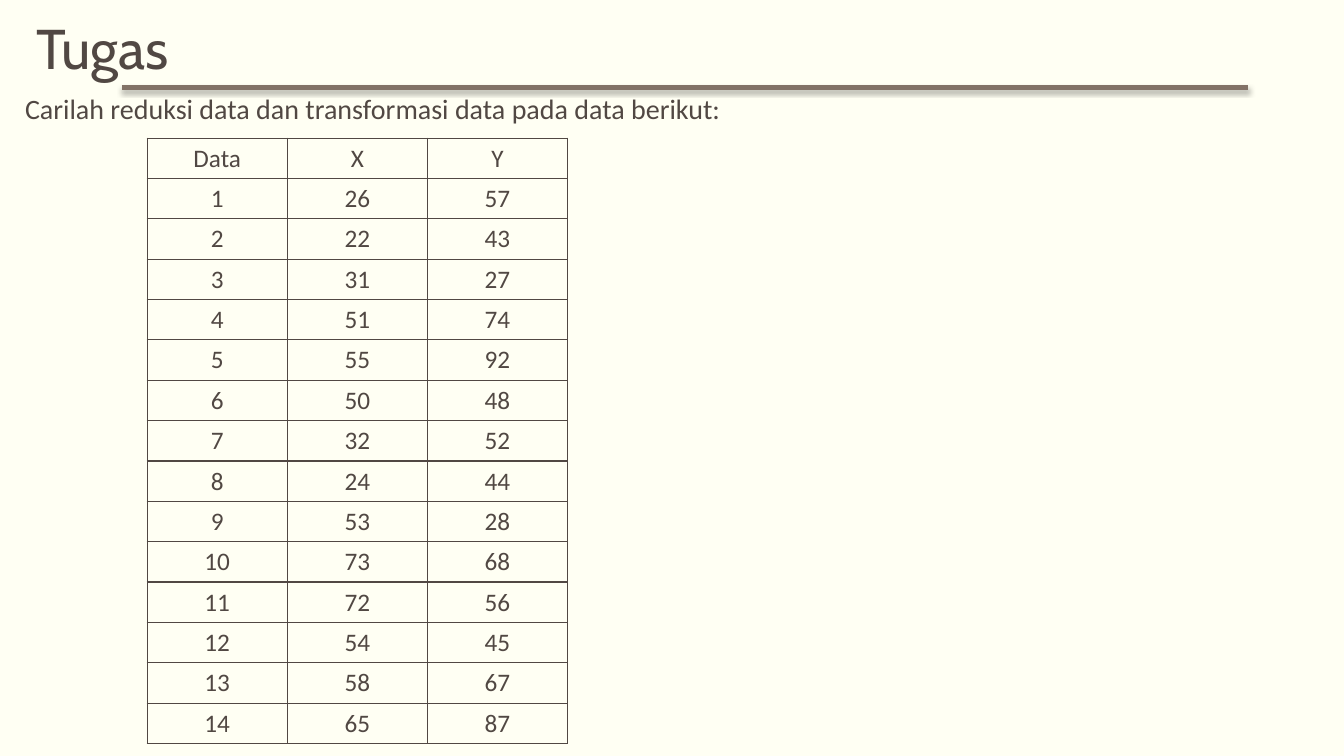
"""Build the assignment slide with its data table."""
import pptx
import pptx.dml.color
import pptx.enum.shapes
import pptx.enum.text
import pptx.oxml
import pptx.oxml.ns
import pptx.util
from pptx.util import Inches

TITLE = "Tugas"
TASK = "Carilah reduksi data dan transformasi data pada data berikut:"
HEADERS = ("Data", "X", "Y")
POINTS = [
    (26, 57), (22, 43), (31, 27), (51, 74), (55, 92), (50, 48), (32, 52),
    (24, 44), (53, 28), (73, 68), (72, 56), (54, 45), (58, 67), (65, 87),
]
BACKGROUND, INK, RULE = "FFFFF3", "514843", "827266"
TABLE_LEFT, TABLE_TOP, COLUMN_WIDTH, ROW_HEIGHT = 1.46, 1.37, 1.39, 0.4


def color(value):
    return pptx.dml.color.RGBColor.from_string(value)


def style(paragraph, size, font="Calibri"):
    paragraph.font.name = font
    paragraph.font.size = pptx.util.Pt(size)
    paragraph.font.color.rgb = color(INK)


def add_xml(parent, xml):
    namespace = pptx.oxml.ns.nsdecls("a")
    parent.append(pptx.oxml.parse_xml(xml.replace(" ", f" {namespace} ", 1)))


def add_rule(slide):
    rule = slide.shapes.add_connector(
        pptx.enum.shapes.MSO_CONNECTOR.STRAIGHT,
        Inches(1.21), Inches(0.87), Inches(12.38), Inches(0.87))
    rule.line.color.rgb = color(RULE)
    rule.line.width = pptx.util.Pt(3.82)
    blur, distance = pptx.util.Pt(3.1), pptx.util.Pt(2)
    add_xml(rule.element.spPr, (
        '<a:effectLst ><a:outerShdw '
        f'blurRad="{blur}" dist="{distance}" dir="5400000" rotWithShape="0">'
        '<a:srgbClr val="000000"><a:alpha val="38000"/></a:srgbClr>'
        '</a:outerShdw></a:effectLst>'))


def add_text(slide, text, box, size, font="Calibri"):
    shape = slide.shapes.add_textbox(*map(Inches, box))
    frame = shape.text_frame
    frame.word_wrap = True
    frame.text = text
    style(frame.paragraphs[0], size, font)
    return frame


def add_borders(cell):
    properties = cell._tc.get_or_add_tcPr()
    for position, side in enumerate(("lnL", "lnR", "lnT", "lnB")):
        add_xml(properties, (
            f'<a:{side} w="12700"><a:solidFill><a:srgbClr val="{INK}"/>'
            f'</a:solidFill></a:{side}>'))
        properties.insert(position, properties[-1])


def add_data_table(slide):
    rows = [HEADERS] + [(number, *point) for number, point in enumerate(POINTS, 1)]
    table = slide.shapes.add_table(
        len(rows), len(HEADERS), Inches(TABLE_LEFT), Inches(TABLE_TOP),
        Inches(COLUMN_WIDTH * len(HEADERS)), Inches(ROW_HEIGHT * len(rows))).table
    table.first_row = table.horz_banding = False
    for column in table.columns:
        column.width = Inches(COLUMN_WIDTH)
    for row, values in zip(table.rows, rows):
        row.height = Inches(ROW_HEIGHT)
        for cell, value in zip(row.cells, values):
            cell.text = str(value)
            cell.fill.background()
            paragraph = cell.text_frame.paragraphs[0]
            paragraph.alignment = pptx.enum.text.PP_ALIGN.CENTER
            style(paragraph, 18)
            add_borders(cell)


def main():
    presentation = pptx.Presentation()
    presentation.slide_width = Inches(13.33)
    presentation.slide_height = Inches(7.5)
    slide = presentation.slides.add_slide(presentation.slide_layouts[6])
    slide.background.fill.solid()
    slide.background.fill.fore_color.rgb = color(BACKGROUND)

    add_rule(slide)
    title = add_text(slide, TITLE, (0.36, 0, 12.97, 0.86), 40, "Cabin")
    title.margin_left = title.margin_right = 0
    title.vertical_anchor = pptx.enum.text.MSO_ANCHOR.BOTTOM
    title.paragraphs[0].line_spacing = 0.9
    task = add_text(slide, TASK, (0.15, 0.86, 12.26, 0.44), 20)
    task.auto_size = pptx.enum.text.MSO_AUTO_SIZE.SHAPE_TO_FIT_TEXT
    task.paragraphs[0].space_after = pptx.util.Pt(6)
    add_data_table(slide)
    presentation.save("out.pptx")


if __name__ == "__main__":
    main()
